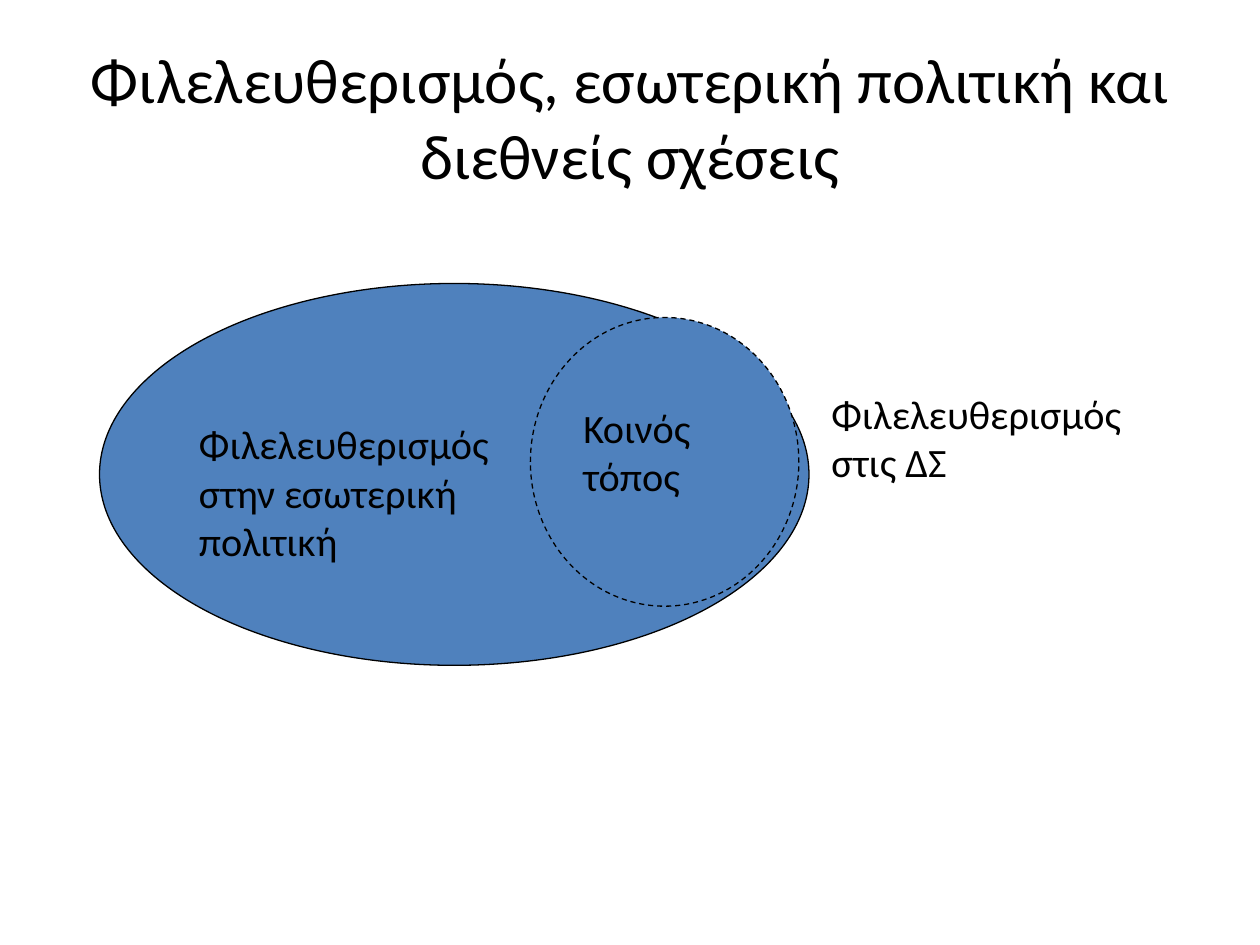
from pptx import Presentation
from pptx.dml.color import RGBColor
from pptx.enum.dml import MSO_LINE
from pptx.enum.shapes import MSO_SHAPE
from pptx.enum.text import MSO_ANCHOR, MSO_AUTO_SIZE, PP_ALIGN
from pptx.util import Pt

FONT = "Calibri"
COLORS = {"ink": "000000", "blue": "4F81BD"}


def color(name):
    return RGBColor.from_string(COLORS[name])


def place(shape, left, top, width, height):
    shape.left, shape.top = Pt(left), Pt(top)
    shape.width, shape.height = Pt(width), Pt(height)


def write(frame, text, size, align):
    frame.word_wrap = True
    para = frame.paragraphs[0]
    para.alignment = align
    run = para.add_run()
    run.text = text
    run.font.name = FONT
    run.font.size = Pt(size)
    run.font.color.rgb = color("ink")


def add_title(slide, box):
    title = slide.shapes.title
    place(title, *box)
    frame = title.text_frame
    frame.auto_size = MSO_AUTO_SIZE.NONE
    frame.vertical_anchor = MSO_ANCHOR.MIDDLE
    write(frame, "Φιλελευθερισμός, εσωτερική πολιτική και διεθνείς σχέσεις",
          36, PP_ALIGN.CENTER)


def add_oval(slide, box, dash):
    oval = slide.shapes.add_shape(MSO_SHAPE.OVAL, *map(Pt, box))
    oval.shadow.inherit = False
    oval.fill.solid()
    oval.fill.fore_color.rgb = color("blue")
    oval.line.color.rgb = color("ink")
    oval.line.width = Pt(0.75)
    oval.line.dash_style = dash


def add_label(slide, box, text):
    label = slide.shapes.add_textbox(*map(Pt, box))
    write(label.text_frame, text, 23, PP_ALIGN.LEFT)
    label.text_frame.auto_size = MSO_AUTO_SIZE.SHAPE_TO_FIT_TEXT


def add_venn(slide, left, top):
    ovals = [
        ((0, 0, 405.4, 218.2), MSO_LINE.SOLID),
        ((246.2, 19.4, 153.4, 165), MSO_LINE.DASH),
    ]
    labels = [
        ((49.7, 74.2, 185.8, 90.7), "Φιλελευθερισμός στην εσωτερική πολιτική"),
        ((411.1, 56.9, 200.9, 63.4), "Φιλελευθερισμός στις ΔΣ"),
        ((269.3, 64.8, 102.2, 63.4), "Κοινός τόπος"),
    ]
    for (x, y, width, height), dash in ovals:
        add_oval(slide, (left + x, top + y, width, height), dash)
    for (x, y, width, height), text in labels:
        add_label(slide, (left + x, top + y, width, height), text)


def main():
    deck = Presentation()
    deck.slide_width, deck.slide_height = Pt(720), Pt(540)
    slide = deck.slides.add_slide(deck.slide_layouts[5])
    add_title(slide, (36, 21.6, 648, 90))
    add_venn(slide, 56.9, 162)
    deck.save("out.pptx")


if __name__ == "__main__":
    main()
